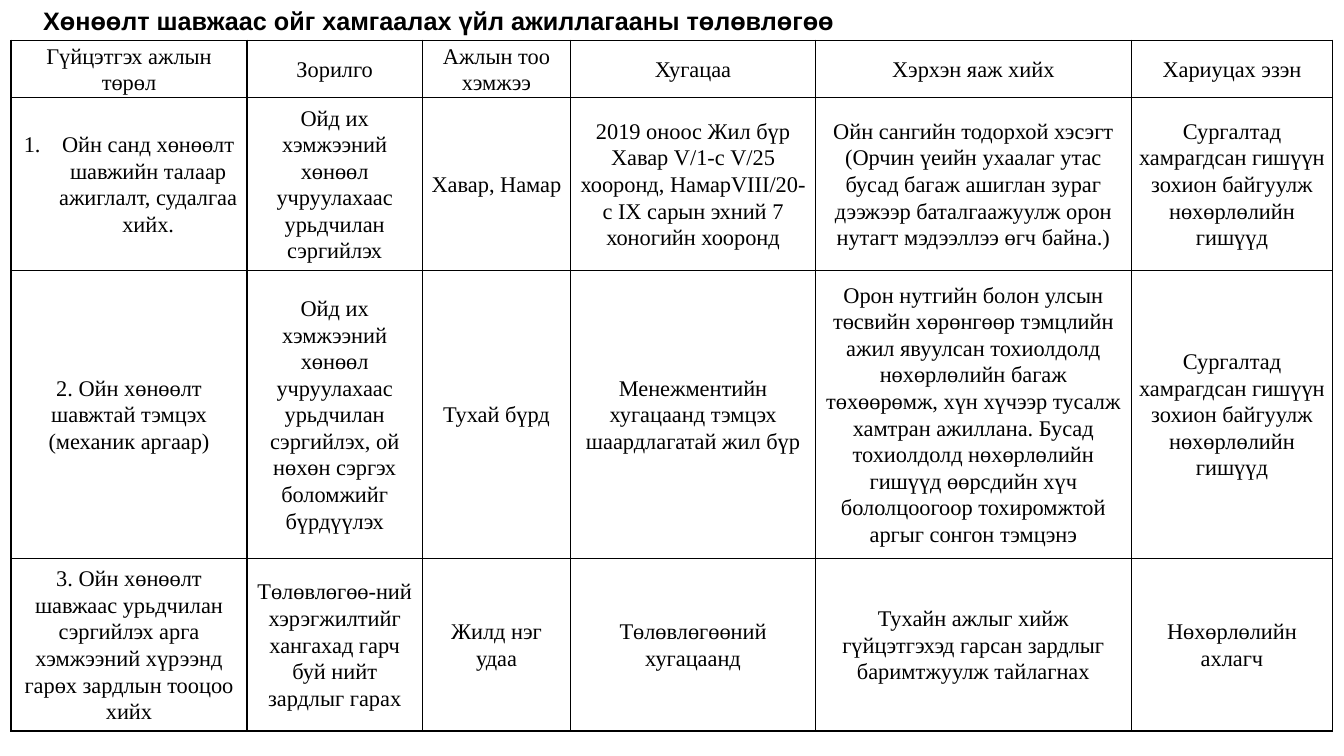
from lxml import etree
from pptx import Presentation
from pptx.dml.color import RGBColor
from pptx.enum.text import MSO_ANCHOR, MSO_AUTO_SIZE, PP_ALIGN
from pptx.oxml.ns import qn
from pptx.util import Inches, Pt

CENTER, LEFT = PP_ALIGN.CENTER, PP_ALIGN.LEFT
MIDDLE = MSO_ANCHOR.MIDDLE
GROW = MSO_AUTO_SIZE.SHAPE_TO_FIT_TEXT

# Content
TITLE = "Хөнөөлт шавжаас ойг хамгаалах үйл ажиллагааны төлөвлөгөө"
MEMBERS = "Сургалтад хамрагдсан гишүүн зохион байгуулж нөхөрлөлийн гишүүд"
PLAN = [
    ["Гүйцэтгэх ажлын төрөл", "Зорилго", "Ажлын тоо хэмжээ",
     "Хугацаа", "Хэрхэн яаж хийх", "Хариуцах эзэн"],
    ["Ойн санд хөнөөлт шавжийн талаар ажиглалт, судалгаа хийх.",
     "Ойд их хэмжээний хөнөөл учруулахаас урьдчилан сэргийлэх",
     "Хавар, Намар",
     "2019 оноос Жил бүр Хавар V/1-с V/25 хооронд, НамарVIII/20-с IX сарын "
     "эхний 7 хоногийн хооронд",
     "Ойн сангийн тодорхой хэсэгт (Орчин үеийн ухаалаг утас бусад багаж "
     "ашиглан зураг дээжээр баталгаажуулж орон нутагт мэдээллээ өгч байна.)",
     MEMBERS],
    ["2. Ойн хөнөөлт шавжтай тэмцэх (механик аргаар)",
     "Ойд их хэмжээний хөнөөл учруулахаас урьдчилан сэргийлэх, ой нөхөн "
     "сэргэх боломжийг бүрдүүлэх",
     "Тухай бүрд",
     "Менежментийн хугацаанд тэмцэх шаардлагатай жил бүр",
     "Орон нутгийн болон улсын төсвийн хөрөнгөөр тэмцлийн ажил явуулсан "
     "тохиолдолд нөхөрлөлийн багаж төхөөрөмж, хүн хүчээр тусалж хамтран "
     "ажиллана. Бусад тохиолдолд нөхөрлөлийн гишүүд өөрсдийн хүч "
     "бололцоогоор тохиромжтой аргыг сонгон тэмцэнэ",
     MEMBERS],
    ["3. Ойн хөнөөлт шавжаас урьдчилан сэргийлэх арга хэмжээний хүрээнд "
     "гарөх зардлын тооцоо хийх",
     "Төлөвлөгөө-ний хэрэгжилтийг хангахад гарч буй нийт зардлыг гарах",
     "Жилд нэг удаа",
     "Төлөвлөгөөний хугацаанд",
     "Тухайн ажлыг хийж гүйцэтгэхэд гарсан зардлыг баримтжуулж тайлагнах",
     "Нөхөрлөлийн ахлагч"],
]
COLUMN_WIDTHS = [2.34, 1.74, 1.47, 2.43, 3.13, 2]
ROW_HEIGHTS = [0.57, 1.71, 2.86, 1.71]
NUMBERED_CELL = (1, 0)
BLACK = "000000"


def color(value):
    return RGBColor.from_string(value)


def write(frame, text, font, size, bold=False, align=LEFT, spacing=None):
    paragraph = frame.paragraphs[0]
    paragraph.alignment = align
    if spacing:
        paragraph.line_spacing = spacing
    run = paragraph.add_run()
    run.text = text
    run.font.name = font
    run.font.size = Pt(size)
    run.font.bold = bold
    run.font.color.rgb = color(BLACK)
    return paragraph


def add_borders(cell):
    properties = cell._tc.get_or_add_tcPr()
    for side in ("lnL", "lnR", "lnT", "lnB"):
        line = etree.SubElement(properties, qn(f"a:{side}"), w=str(Pt(1)))
        fill = etree.SubElement(line, qn("a:solidFill"))
        etree.SubElement(fill, qn("a:srgbClr"), val=BLACK)


def add_number(paragraph, indent):
    properties = paragraph._p.get_or_add_pPr()
    properties.set("marL", str(indent))
    properties.set("indent", str(-indent))
    etree.SubElement(properties, qn("a:buAutoNum"), type="arabicPeriod")


presentation = Presentation()
presentation.slide_width = Inches(13.33)
presentation.slide_height = Inches(7.5)
slide = presentation.slides.add_slide(presentation.slide_layouts[6])

# Title
title = slide.shapes.add_textbox(Inches(0.33), 0, Inches(12.68), Inches(0.4))
title.text_frame.word_wrap = True
title.text_frame.auto_size = GROW
write(title.text_frame, TITLE, "Arial", 18, bold=True)

# Plan table
table = slide.shapes.add_table(
    len(PLAN), len(COLUMN_WIDTHS), Inches(0.11), Inches(0.4),
    Inches(sum(COLUMN_WIDTHS)), Inches(sum(ROW_HEIGHTS))).table
table.first_row = False
table.horz_banding = False
for column, width in zip(table.columns, COLUMN_WIDTHS):
    column.width = Inches(width)
for row, height in zip(table.rows, ROW_HEIGHTS):
    row.height = Inches(height)

for row_index, texts in enumerate(PLAN):
    for column_index, text in enumerate(texts):
        cell = table.cell(row_index, column_index)
        cell.vertical_anchor = MIDDLE
        cell.margin_left = cell.margin_right = Inches(0.07)
        cell.margin_top = cell.margin_bottom = 0
        add_borders(cell)
        cell.fill.background()
        paragraph = write(cell.text_frame, text, "Times New Roman", 16,
                          align=CENTER, spacing=1.07)
        if (row_index, column_index) == NUMBERED_CELL:
            add_number(paragraph, Inches(0.38))

presentation.save("out.pptx")
